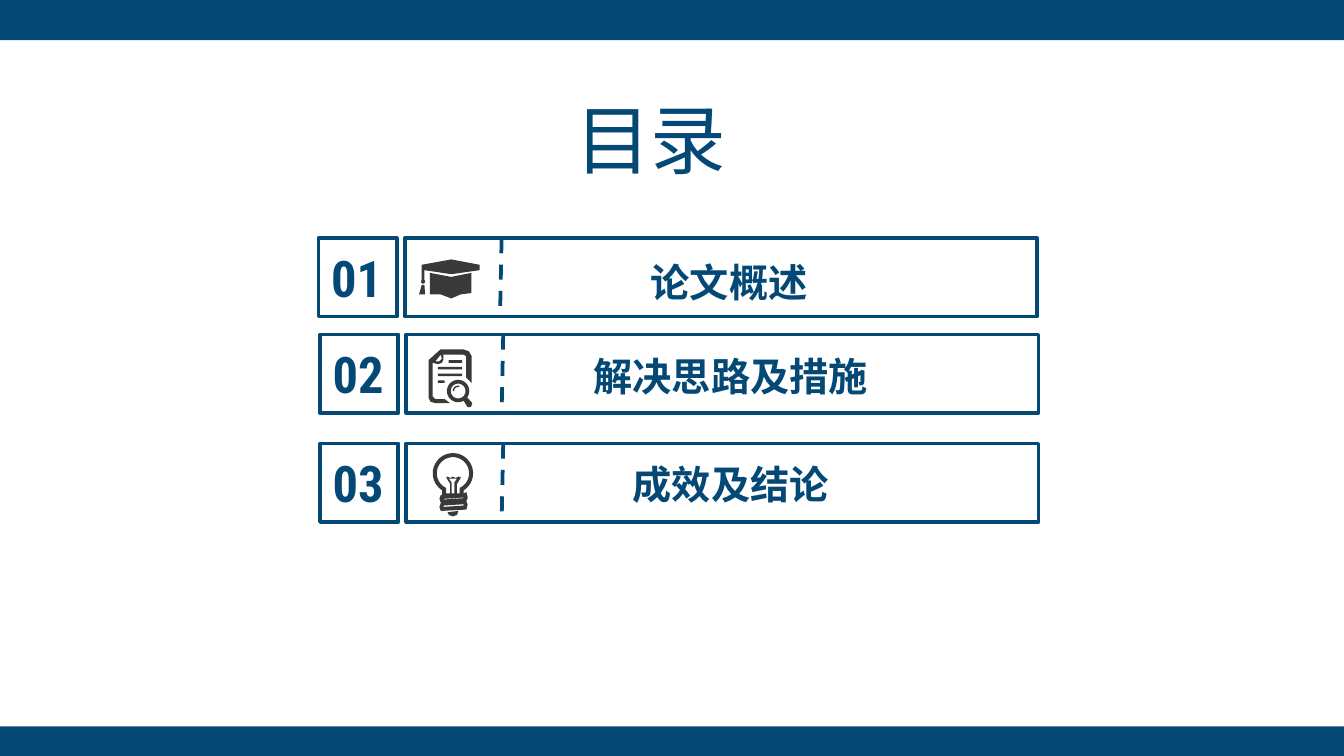
import math

import pptx
import pptx.dml.color
import pptx.enum.dml
import pptx.enum.shapes
import pptx.enum.text
import pptx.oxml.ns
import pptx.util
from lxml import etree

Cm = pptx.util.Cm
RECTANGLE = pptx.enum.shapes.MSO_SHAPE.RECTANGLE
NAVY, CHARCOAL = "044875", "3B3838"
HEADING_FONT, NUMBER_FONT = "Noto Sans CJK SC", "Roboto Condensed"
ICON_UNIT = 0.0254  # centimetres per step of the icon grid


def arc(x, y, radius, start=0, end=360):
    """Points along an arc, with angles in degrees, clockwise from the right."""
    steps = 40
    angles = [math.radians(start + (end - start) * i / steps) for i in range(steps + 1)]
    return [(x + radius * math.cos(a), y + radius * math.sin(a)) for a in angles]


def bar(left, top, right, bottom):
    return [(left, top), (right, top), (right, bottom), (left, bottom)]


# Each icon is a list of contours; inner contours are holes.
CAP = [
    [(2, 4), (24, 0), (45, 4), (45, 8), (24, 11), (4, 8), (4, 15), (2, 15)],
    [(8, 10), (24, 13), (39, 10), (39, 25), (31, 26), (24, 29), (16, 26), (8, 26)],
    arc(3, 16.5, 1.5),
    [(2, 19), (4, 19), (4.5, 26), (0, 26)],
]
DOCUMENT = [
    [(32, 25), (32, 5), (30, 1.5), (26, 0), (9, 0), (0, 8), (0, 36), (1.5, 39),
     (5, 40), (16, 40), (12, 37), (5, 37), (3, 35), (3, 10), (7, 11), (10, 10),
     (11, 8), (11, 4), (26, 4), (28, 5), (28, 21)],
    [(9, 4), (5, 9), (8, 9), (10, 7)],
    bar(15, 8, 25, 10), bar(7, 13, 25, 15), bar(7, 18, 25, 20), bar(7, 23, 12, 25),
    arc(22, 31, 8.3), arc(22, 31, 5.5),
    arc(22, 31, 4, 180, 285) + arc(22, 31, 3, 285, 180),
    [(26, 38), (29, 36), (32.5, 40), (31.5, 43), (29, 43)],
]
BULB = [
    arc(15, 15, 15, 122, 418) + [
        (23, 30), (25, 29), (26, 33), (25, 36), (26, 38), (25, 42),
        (6, 43), (5, 40), (6, 37), (5, 34), (6, 31), (7, 31)],
    arc(15, 15, 12, 115, 425) + [
        (20, 30), (18, 30), (18, 23), (21, 18), (19, 17.5), (17, 18.5),
        (15, 17.5), (13, 18.5), (11, 17.5), (10, 18), (13, 23), (13, 30), (10, 30)],
    [(12, 19), (18, 19), (16, 22), (16, 30), (14, 30), (14, 22)],
    [(8, 34), (23, 33), (23, 33.5), (8, 34.5)],
    [(8, 39), (23, 38), (23, 39), (8, 40)],
    [(11, 44), (19, 43), (18, 46), (15, 47), (12, 46)],
]

# number, heading, row left, row top, heading top, icon, icon left, icon top (cm)
ROWS = [
    ("01", "论文概述", 6.02, 4.5, 4.75, CAP, 7.92, 4.9),
    ("02", "解决思路及措施", 6.05, 6.32, 6.53, DOCUMENT, 8.1, 6.6),
    ("03", "成效及结论", 6.05, 8.38, 8.56, BULB, 8.18, 8.56),
]
BANDS = [(-0.03, 0.79), (13.72, 0.56)]  # top, height
BOX_SIDE, BAR_OFFSET, BAR_WIDTH = 1.48, 1.63, 11.95


def color(hex_string):
    return pptx.dml.color.RGBColor.from_string(hex_string)


def fill_only(shape, hex_string):
    shape.shadow.inherit = False
    shape.fill.solid()
    shape.fill.fore_color.rgb = color(hex_string)
    shape.line.fill.background()


def add_frame(shapes, left, top, width):
    frame = shapes.add_shape(RECTANGLE, Cm(left), Cm(top), Cm(width), Cm(BOX_SIDE))
    frame.shadow.inherit = False
    frame.fill.background()
    frame.line.color.rgb = color(NAVY)
    frame.line.width = pptx.util.Pt(2)


def add_divider(shapes, left, top):
    divider = shapes.add_connector(
        pptx.enum.shapes.MSO_CONNECTOR.STRAIGHT,
        Cm(left), Cm(top), Cm(left - 0.03), Cm(top + BOX_SIDE))
    divider.line.color.rgb = color(NAVY)
    divider.line.width = pptx.util.Pt(2)
    divider.line.dash_style = pptx.enum.dml.MSO_LINE.DASH
    etree.SubElement(divider._element.spPr, pptx.oxml.ns.qn("a:effectLst"))


def add_text(shapes, text, left, top, width, height, size, font, bold=True):
    box = shapes.add_textbox(Cm(left), Cm(top), Cm(width), Cm(height))
    frame = box.text_frame
    frame.word_wrap = True
    frame.vertical_anchor = pptx.enum.text.MSO_ANCHOR.MIDDLE
    frame.margin_left = frame.margin_right = frame.margin_top = frame.margin_bottom = 0
    paragraph = frame.paragraphs[0]
    paragraph.alignment = pptx.enum.text.PP_ALIGN.CENTER
    run = paragraph.add_run()
    run.text = text
    run.font.size = pptx.util.Pt(size)
    run.font.bold = bold
    run.font.name = font
    run.font.color.rgb = color(NAVY)
    east_asian = etree.SubElement(run.font._element, pptx.oxml.ns.qn("a:ea"))
    east_asian.set("typeface", font)


def add_icon(shapes, contours, left, top):
    placed = [[(Cm(left + x * ICON_UNIT), Cm(top + y * ICON_UNIT)) for x, y in contour]
              for contour in contours]
    builder = shapes.build_freeform(*placed[0][0])
    for contour in placed:
        builder.move_to(*contour[0])
        builder.add_line_segments(contour[1:], close=True)
    fill_only(builder.convert_to_shape(), CHARCOAL)


def add_row(slide, number, heading, left, top, heading_top, icon, icon_left, icon_top):
    shapes = slide.shapes.add_group_shape().shapes
    add_text(shapes, heading, left + 4.8, heading_top, 5.92, 1.14, 21, HEADING_FONT)
    add_frame(shapes, left + BAR_OFFSET, top, BAR_WIDTH)
    add_divider(shapes, left + 3.46, top)
    add_frame(shapes, left, top, BOX_SIDE)
    add_text(shapes, number, left - 0.23, top, 1.9, 1.48, 27, NUMBER_FONT)
    add_icon(shapes, icon, icon_left, icon_top)


def main():
    presentation = pptx.Presentation()
    presentation.slide_width, presentation.slide_height = Cm(25.4), Cm(14.28)
    slide = presentation.slides.add_slide(presentation.slide_layouts[6])
    for top, height in BANDS:
        band = slide.shapes.add_shape(
            RECTANGLE, 0, Cm(top), presentation.slide_width, Cm(height))
        fill_only(band, NAVY)
    for row in ROWS:
        add_row(slide, *row)
    add_text(slide.shapes, "目录", 5.33, 1.63, 13.94, 1.98, 40.5, HEADING_FONT, bold=False)
    presentation.save("out.pptx")


if __name__ == "__main__":
    main()
